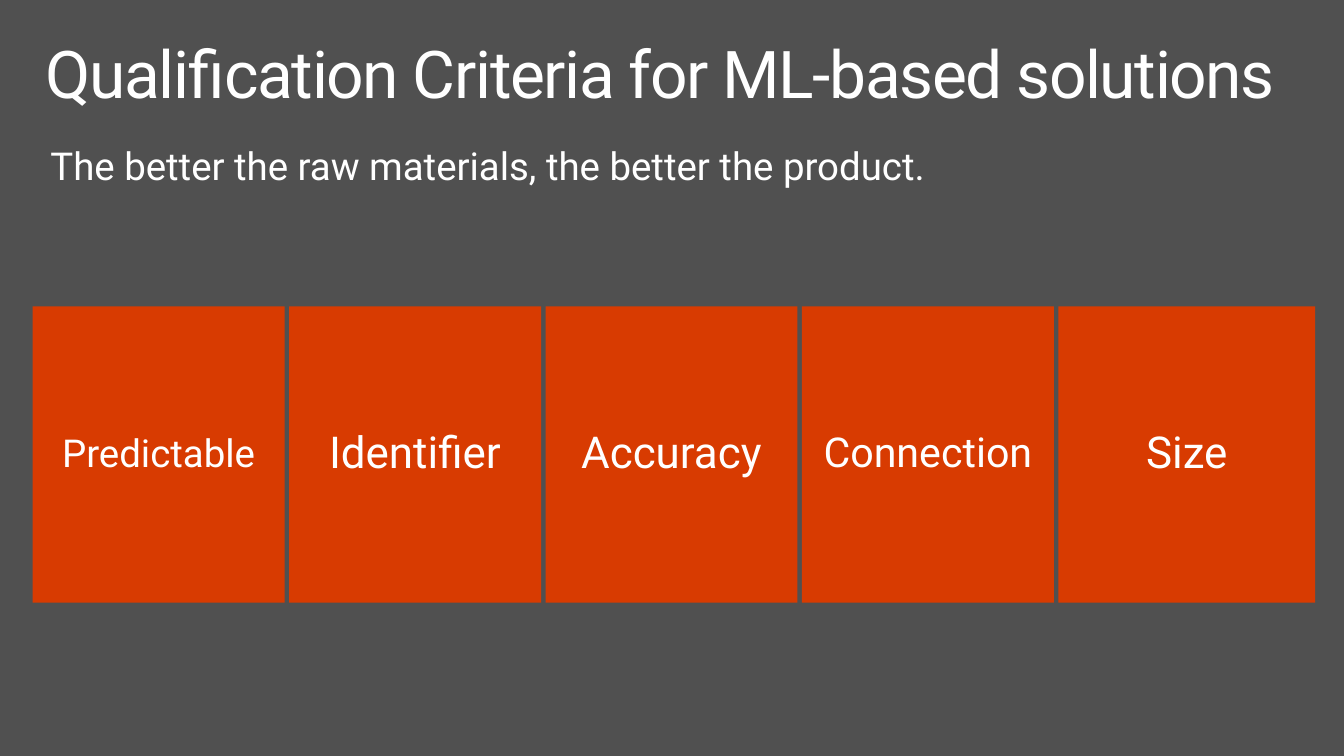
from pptx import Presentation
from pptx.dml.color import RGBColor
from pptx.enum.shapes import MSO_SHAPE
from pptx.enum.text import MSO_ANCHOR, PP_ALIGN
from pptx.util import Pt

PX = 9144  # EMU per px, 100 px to the inch
COLORS = {"background": "505050", "tile": "D83B01", "text": "FFFFFF"}
FONT = "Roboto"

TITLE = "Qualification Criteria for ML-based solutions"
SUBTITLE = "The better the raw materials, the better the product."
CRITERIA = [("Predictable", 28), ("Identifier", 32), ("Accuracy", 32),
            ("Connection", 30), ("Size", 32)]

SLIDE_W, SLIDE_H = 1360, 765
TILES_LEFT, TILES_RIGHT, TILES_TOP, TILE_H = 33, 1331, 310, 300
TILE_W, LAST_TILE_W = 255, 260


def px(*lengths):
    return [round(length * PX) for length in lengths]


def rgb(name):
    return RGBColor.from_string(COLORS[name])


def write(shape, text, size, margins=(20, 16), space_after=6,
          align=PP_ALIGN.LEFT, anchor=MSO_ANCHOR.TOP):
    side, edge = px(*margins)
    tf = shape.text_frame
    p = tf.paragraphs[0]
    r = p.add_run()
    r.text = text
    formats = [
        (tf, {"word_wrap": True, "vertical_anchor": anchor,
              "margin_left": side, "margin_right": side,
              "margin_top": edge, "margin_bottom": edge}),
        (p, {"alignment": align, "line_spacing": 0.9,
             "space_after": Pt(space_after)}),
        (r.font, {"name": FONT, "size": Pt(size)}),
    ]
    for target, values in formats:
        for name, value in values.items():
            setattr(target, name, value)
    r.font.color.rgb = rgb("text")
    return r


def add_tile(s, left, width, text, size):
    sp = s.shapes.add_shape(MSO_SHAPE.RECTANGLE,
                            *px(left, TILES_TOP, width, TILE_H))
    sp.shadow.inherit = False
    sp.fill.solid()
    sp.fill.fore_color.rgb = rgb("tile")
    sp.line.fill.background()
    write(sp, text, size, align=PP_ALIGN.CENTER, anchor=MSO_ANCHOR.MIDDLE)


def main():
    prs = Presentation()
    prs.slide_width, prs.slide_height = px(SLIDE_W, SLIDE_H)
    s = prs.slides.add_slide(prs.slide_layouts[6])
    s.background.fill.solid()
    s.background.fill.fore_color.rgb = rgb("background")

    title = s.shapes.add_textbox(*px(30, 32, 1300, 100))
    r = write(title, TITLE, 48, margins=(16, 10), space_after=0)
    r.font._element.set("spc", "-100")
    subtitle = s.shapes.add_textbox(*px(31, 133, 991, 77))
    write(subtitle, SUBTITLE, 28)

    last = len(CRITERIA) - 1
    pitch = (TILES_RIGHT - LAST_TILE_W - TILES_LEFT) / last
    for i, (text, size) in enumerate(CRITERIA):
        width = LAST_TILE_W if i == last else TILE_W
        add_tile(s, TILES_LEFT + i * pitch, width, text, size)

    prs.save("out.pptx")


if __name__ == "__main__":
    main()
